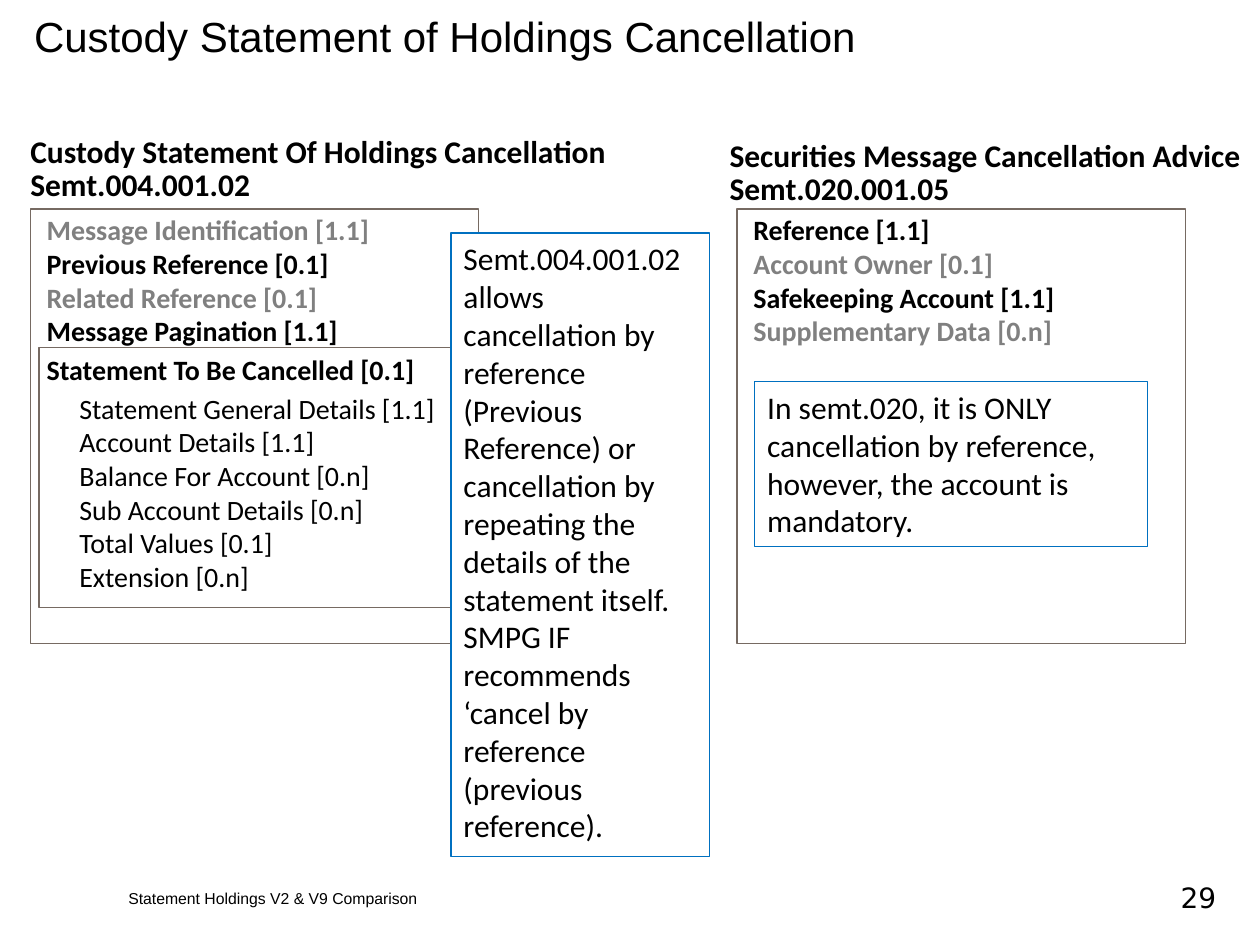
from dataclasses import dataclass, field
from typing import Any, Optional

from lxml.etree import SubElement
from pptx import Presentation
from pptx.dml.color import RGBColor
from pptx.enum.shapes import MSO_SHAPE as Kind
from pptx.enum.text import MSO_ANCHOR as Anchor, MSO_AUTO_SIZE as Auto, PP_ALIGN as Align
from pptx.oxml.ns import qn
from pptx.util import Inches, Pt

BLACK = RGBColor(0x00, 0x00, 0x00)
GRAY = RGBColor(0x80, 0x80, 0x80)
BROWN = RGBColor(0x76, 0x6A, 0x62)
BLUE = RGBColor(0x00, 0x70, 0xC0)
WHITE = RGBColor(0xFF, 0xFF, 0xFF)

WIDE, HIGH = Inches(10), Inches(7.5)
COLS, ROWS = 100, 75
TAB = Inches(0.26)

HEAD = {"name": "Calibri", "size": Pt(18), "bold": True}
ITEM = {"name": "Calibri", "size": Pt(16), "bold": True}
NOTE = {"name": "Calibri", "size": Pt(18), "bold": False}
TITLE = {"name": "Arial", "size": Pt(24), "bold": False}
FOOT = {"name": "Arial", "size": Pt(9), "bold": False}
PAGE = {"name": "DejaVu Sans", "size": Pt(16), "bold": False}

GROW = {"auto_size": Auto.SHAPE_TO_FIT_TEXT, "vertical_anchor": Anchor.TOP}
LOOSE = {**GROW, "word_wrap": False}
WRAP = {**GROW, "word_wrap": True}
MID = {"auto_size": Auto.NONE, "vertical_anchor": Anchor.MIDDLE, "word_wrap": True}


@dataclass
class Box:
    col: float
    row: float
    cols: float
    rows: float

    def rect(self) -> tuple[int, int, int, int]:
        x, y = WIDE / COLS, HIGH / ROWS
        return (round(self.col * x), round(self.row * y),
                round(self.cols * x), round(self.rows * y))


@dataclass
class Line:
    text: str
    color: RGBColor = BLACK
    deep: bool = False
    form: dict[str, Any] = field(default_factory=dict)


@dataclass
class Block:
    slot: int
    box: Box
    font: dict[str, Any]
    frame: dict[str, Any]
    lines: list[Line]


@dataclass
class Panel:
    box: Box
    edge: RGBColor
    fill: Optional[RGBColor] = None
    note: str = ""


TIGHT = {"line_spacing": Pt(19)}
GAP = {"space_after": Pt(3)}
DETAILS = ["Statement General Details [1.1]", "Account Details [1.1]",
           "Balance For Account [0.n]", "Sub Account Details [0.n]",
           "Total Values [0.1]", "Extension [0.n]"]

BLOCKS = [
    Block(0, Box(1.7, 0, 97.3, 5.6), TITLE, MID,
          [Line("Custody Statement of Holdings Cancellation")]),
    Block(1, Box(1.4, 10.3, 48.9, 6.3), HEAD, LOOSE,
          [Line("Custody Statement Of Holdings Cancellation", form=TIGHT),
           Line("Semt.004.001.02", form=TIGHT)]),
    Block(2, Box(2.7, 16.4, 33.8, 31.5), ITEM, LOOSE,
          [Line("Message Identification [1.1]", GRAY),
           Line("Previous Reference [0.1]"),
           Line("Related Reference [0.1]", GRAY),
           Line("Message Pagination [1.1]", form=GAP),
           Line("Statement To Be Cancelled [0.1]", form=GAP),
           *(Line(text, deep=True) for text in DETAILS)]),
    Block(3, Box(56.9, 10.3, 42.9, 6.7), HEAD, LOOSE,
          [Line("Securities Message Cancellation Advice"),
           Line("Semt.020.001.05", form=TIGHT)]),
    Block(4, Box(58.8, 16.4, 26.3, 11.8), ITEM, LOOSE,
          [Line("Reference [1.1]"),
           Line("Account Owner [0.1]", GRAY),
           Line("Safekeeping Account [1.1]"),
           Line("Supplementary Data [0.n]", GRAY, form=GAP)]),
]

PANELS = [
    Panel(Box(2.4, 16.6, 35.6, 34.5), BROWN),
    Panel(Box(3.1, 27.6, 33.4, 20.6), BROWN),
    Panel(Box(58.5, 16.6, 35.6, 34.5), BROWN),
    Panel(Box(35.8, 18.5, 20.5, 49.5), BLUE, WHITE,
          "Semt.004.001.02 allows cancellation by reference (Previous Reference) "
          "or cancellation by repeating the details of the statement itself. "
          "SMPG IF recommends ‘cancel by reference (previous reference)."),
    Panel(Box(59.9, 30.3, 31.2, 13.1), BLUE, WHITE,
          "In semt.020, it is ONLY cancellation by reference, however, "
          "the account is mandatory."),
]


def style(item: Any, form: dict[str, Any]) -> None:
    for key, value in form.items():
        setattr(item, key, value)


def write(shape: Any, font: dict[str, Any], frame: dict[str, Any],
          lines: list[Line], align: Align = Align.LEFT) -> None:
    body = shape.text_frame
    style(body, frame)
    for n, line in enumerate(lines):
        para = body.paragraphs[0] if n == 0 else body.add_paragraph()
        props = para._p.get_or_add_pPr()
        props.set("marL", str(TAB if line.deep else 0))
        props.set("indent", "0")
        SubElement(props, qn("a:buNone"))
        style(para, {"alignment": align, "space_before": Pt(0), **line.form})
        run = para.add_run()
        run.text = line.text
        style(run.font, {**font, "bold": font["bold"] and not line.deep})
        run.font.color.rgb = line.color


def place(slide: Any, block: Block) -> None:
    shape = next(s for s in slide.placeholders
                 if s.placeholder_format.idx == block.slot)
    style(shape, dict(zip(("left", "top", "width", "height"), block.box.rect())))
    write(shape, block.font, block.frame, block.lines)


def draw(slide: Any, panel: Panel) -> None:
    shape = slide.shapes.add_shape(Kind.RECTANGLE, *panel.box.rect())
    shape.shadow.inherit = False
    shape.line.color.rgb = panel.edge
    shape.line.width = Pt(0.75)
    if panel.fill is None:
        shape.fill.background()
    else:
        shape.fill.solid()
        shape.fill.fore_color.rgb = panel.fill
    if panel.note:
        write(shape, NOTE, WRAP, [Line(panel.note)])


def label(slide: Any, box: Box, text: str, font: dict[str, Any], align: Align) -> None:
    shape = slide.shapes.add_textbox(*box.rect())
    write(shape, font, MID, [Line(text)], align)


def main() -> None:
    deck = Presentation()
    deck.slide_width, deck.slide_height = WIDE, HIGH
    slide = deck.slides.add_slide(deck.slide_layouts.get_by_name("Comparison"))
    for block in BLOCKS:
        place(slide, block)
    label(slide, Box(9.2, 70, 62.1, 2.5), "Statement Holdings V2 & V9 Comparison",
          FOOT, Align.LEFT)
    label(slide, Box(89.2, 70, 8.3, 2.5), "29", PAGE, Align.RIGHT)
    for panel in PANELS:
        draw(slide, panel)
    deck.save("out.pptx")


if __name__ == "__main__":
    main()
